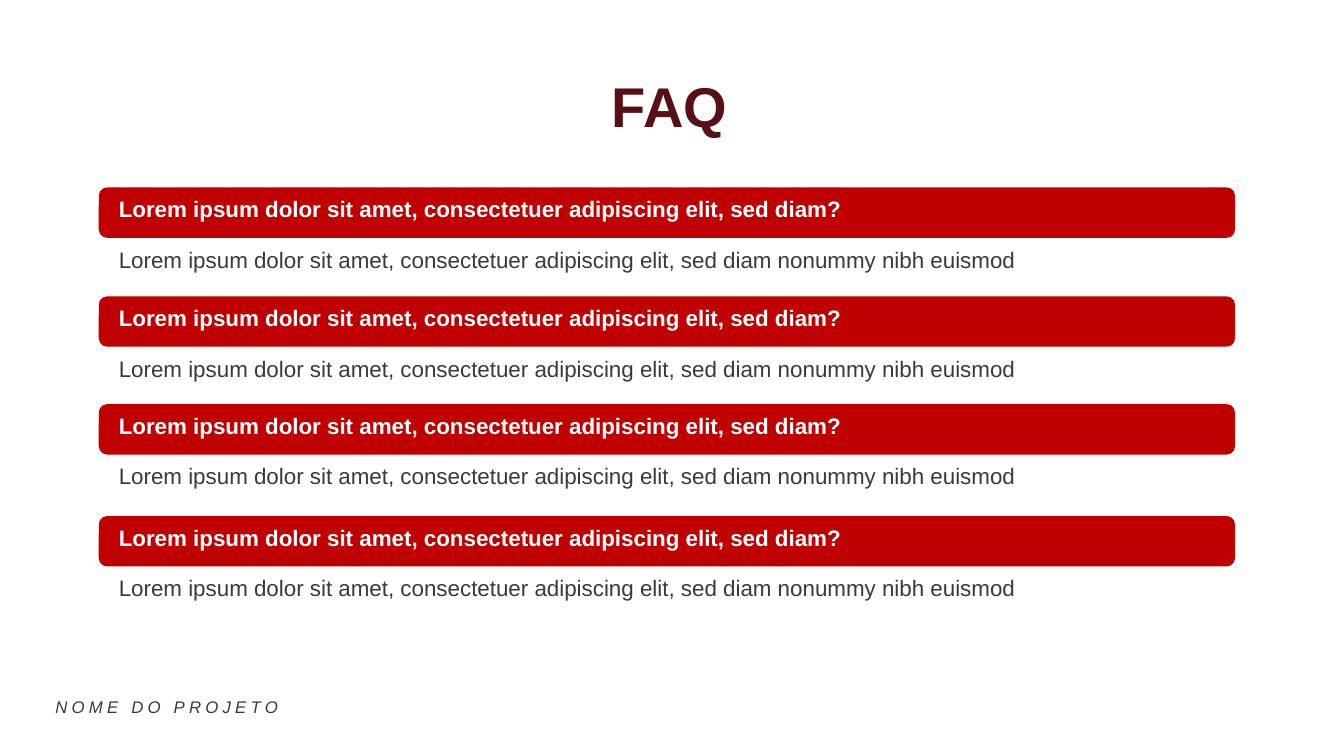
from pptx import Presentation
from pptx.dml.color import RGBColor
from pptx.enum.shapes import MSO_SHAPE
from pptx.enum.text import PP_ALIGN
from pptx.util import Inches, Pt

ROUNDED = MSO_SHAPE.ROUNDED_RECTANGLE
LEFT, CENTER = PP_ALIGN.LEFT, PP_ALIGN.CENTER

FONT = "Arial"
COLORS = {
    "background": "FFFFFF",
    "title": "590F16",
    "bar": "C00000",
    "question": "FFFFFF",
    "body": "3A3A3A",
}
QUESTION = "Lorem ipsum dolor sit amet, consectetuer adipiscing elit, sed diam?"
ANSWER = ("Lorem ipsum dolor sit amet, consectetuer adipiscing elit, "
          "sed diam nonummy nibh euismod")
BAR_TOPS = [1.86, 2.94, 4.01, 5.12]


def add_text(slide, text, left, top, width, height, size, color,
             bold=False, italic=False, align=LEFT):
    """Add a one-line text box and return its run."""
    box = slide.shapes.add_textbox(
        Inches(left), Inches(top), Inches(width), Inches(height))
    box.text_frame.word_wrap = True
    box.text_frame.text = text
    paragraph = box.text_frame.paragraphs[0]
    paragraph.alignment = align
    run = paragraph.runs[0]
    run.font.name = FONT
    run.font.size = Pt(size)
    run.font.bold = bold
    run.font.italic = italic
    run.font.color.rgb = RGBColor.from_string(COLORS[color])
    return run


presentation = Presentation()
presentation.slide_width = Inches(13.33)
presentation.slide_height = Inches(7.5)
slide = presentation.slides.add_slide(presentation.slide_layouts[6])
slide.background.fill.solid()
slide.background.fill.fore_color.rgb = RGBColor.from_string(COLORS["background"])

footer = add_text(slide, "NOME DO PROJETO", 0.45, 6.86, 3.11, 0.3, 12, "body",
                  italic=True)
footer._r.get_or_add_rPr().set("spc", "300")  # letter spacing of 3 points

add_text(slide, "FAQ", 3.75, 0.66, 5.78, 0.77, 40, "title",
         bold=True, align=CENTER)

for top in BAR_TOPS:
    bar = slide.shapes.add_shape(
        ROUNDED, Inches(0.98), Inches(top), Inches(11.27), Inches(0.5))
    bar.shadow.inherit = False
    bar.fill.solid()
    bar.fill.fore_color.rgb = RGBColor.from_string(COLORS["bar"])
    bar.line.fill.background()
    add_text(slide, QUESTION, 1.08, top + 0.03, 9.02, 0.37, 16, "question",
             bold=True)
    add_text(slide, ANSWER, 1.08, top + 0.53, 10.55, 0.37, 16, "body")

presentation.save("out.pptx")
